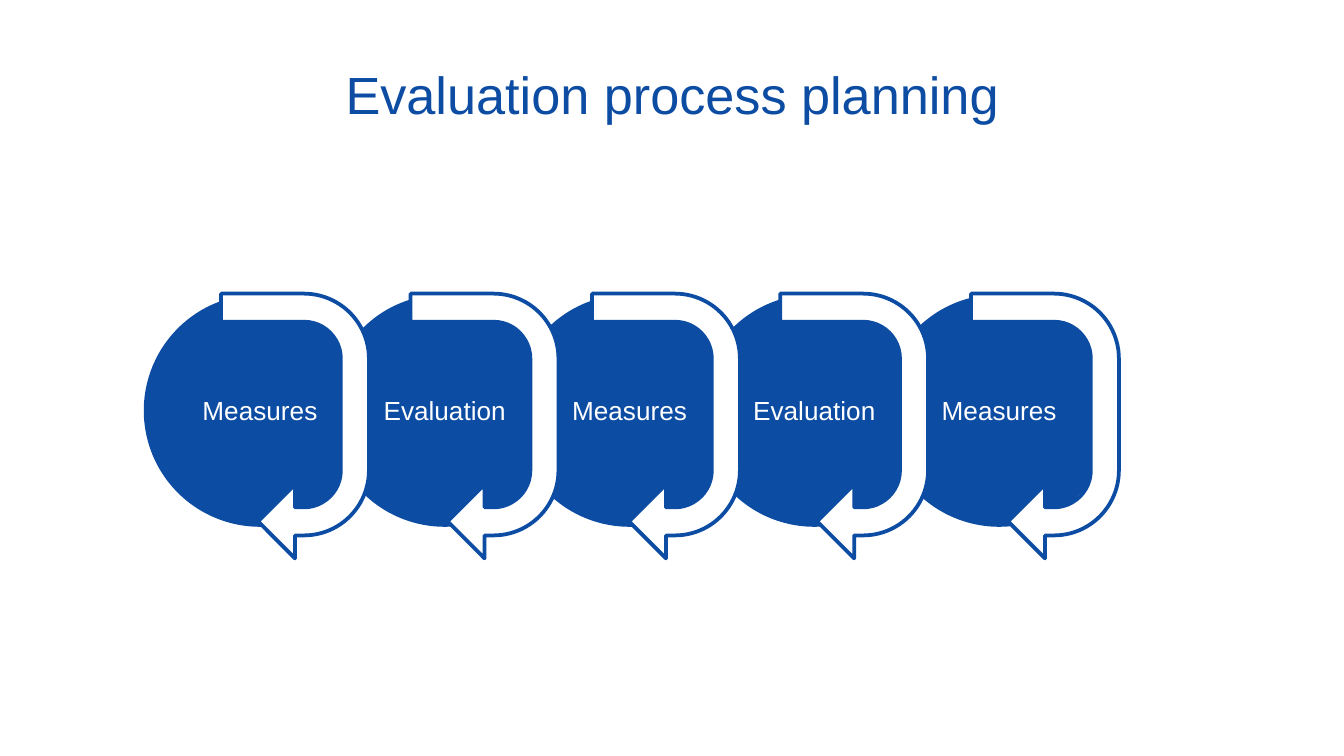
from pptx import Presentation
from pptx.dml.color import RGBColor as Rgb
from pptx.enum.shapes import MSO_SHAPE as Shape
from pptx.enum.text import MSO_ANCHOR as Anchor, PP_ALIGN as Align
from pptx.util import Inches, Pt

HUES = {"blue": "0C4CA3", "white": "FFFFFF"}
STEPS = ["Measures", "Evaluation", "Measures", "Evaluation", "Measures"]
TURNS = [1.21, 2.62, 3.97, 5.37, 6.79]
BENDS = [0.19, 0.25, 0.25, 0.44, 0.75]
FIRST, LAST = 1.07, 6.57


def hue(name):
    """Return the named colour."""
    return Rgb.from_string(HUES[name])


def write(shape, text, size=14, color="white", font="Arial"):
    """Put centred text in a shape."""
    frame = shape.text_frame
    frame.word_wrap = True
    frame.vertical_anchor = Anchor.MIDDLE
    line = frame.paragraphs[0]
    line.alignment = Align.CENTER
    run = line.add_run()
    run.text = text
    run.font.size = Pt(size)
    run.font.name = font
    run.font.color.rgb = hue(color)


def place(shape, left, top, width, height):
    """Set the position and size of a shape."""
    shape.left, shape.top = Inches(left), Inches(top)
    shape.width, shape.height = Inches(width), Inches(height)


def add_form(slide, kind, box, fill):
    """Add a flat shape with no outline."""
    shape = slide.shapes.add_shape(kind, *map(Inches, box))
    shape.shadow.inherit = False
    shape.fill.solid()
    shape.fill.fore_color.rgb = hue(fill)
    shape.line.fill.background()
    return shape


def add_disc(slide, left, text):
    """Add a labelled circle for one step."""
    write(add_form(slide, Shape.OVAL, (left, 2.19, 1.73, 1.73), "blue"), text)


def add_turn(slide, left):
    """Add a U-turn arrow that opens to the left."""
    turn = add_form(slide, Shape.U_TURN_ARROW, (left, 2.62, 1.97, 1.1), "white")
    for i, bend in enumerate(BENDS):
        turn.adjustments[i] = bend
    turn.rotation = 90
    turn.line.color.rgb = hue("blue")
    turn.line.width = Pt(2)


def main():
    """Build the slide and save it."""
    deck = Presentation()
    deck.slide_width, deck.slide_height = Inches(10), Inches(10 * 9 / 16)
    slide = deck.slides.add_slide(deck.slide_layouts[5])
    title = slide.shapes.title
    place(title, 0.5, 0.23, 9, 0.94)
    write(title, "Evaluation process planning", size=28, color="blue")
    step = (LAST - FIRST) / (len(STEPS) - 1)
    for i, text in enumerate(STEPS):
        add_disc(slide, FIRST + i * step, text)
    for left in reversed(TURNS):
        add_turn(slide, left)
    deck.save("out.pptx")


if __name__ == "__main__":
    main()
